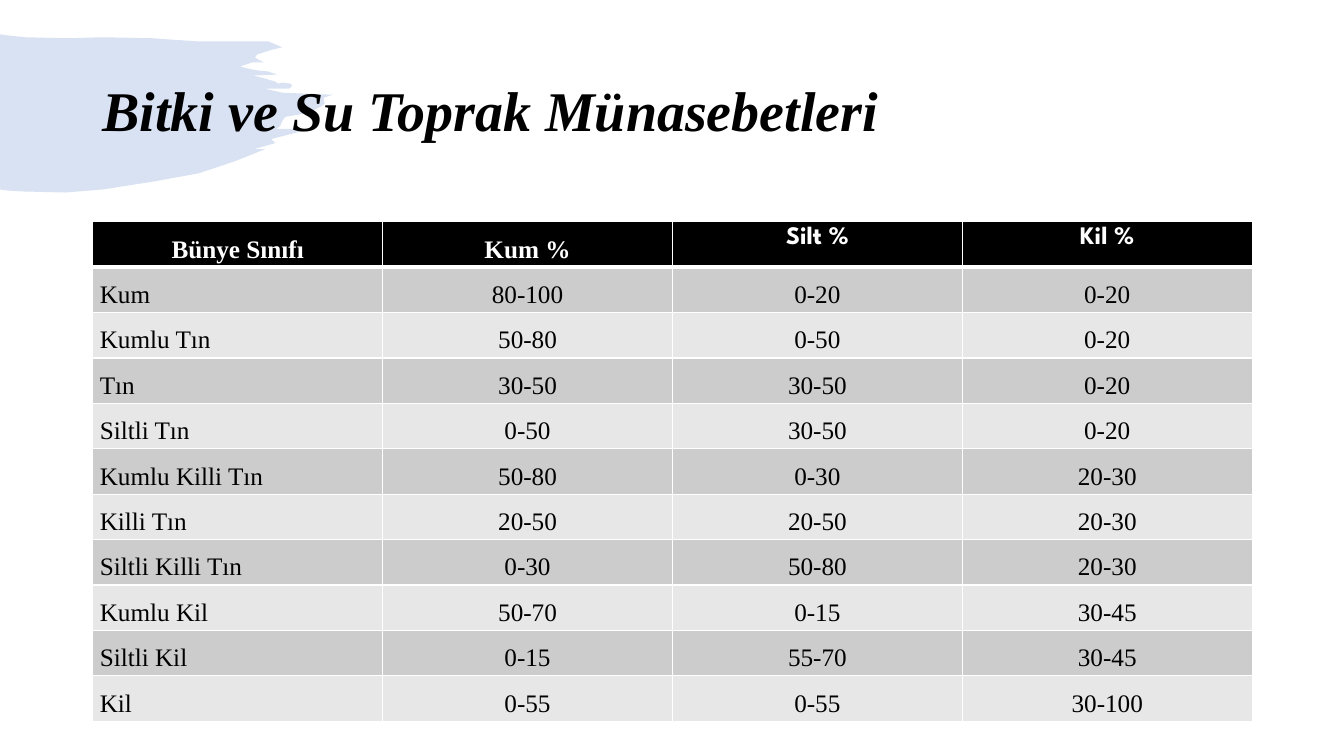
from typing import NamedTuple

from lxml.etree import SubElement as Sub
from pptx import Presentation
from pptx.dml.color import RGBColor
from pptx.enum.text import MSO_ANCHOR as Anchor, PP_ALIGN as Align
from pptx.oxml.ns import qn
from pptx.util import Inches, Pt

SERIF = "Times New Roman"
SANS = "League Spartan"
HEADS = ("Bünye Sınıfı", "Kum %", "Silt %", "Kil %")
BRUSH = [
    (0, 0.34), (0.06, 0.35), (0.25, 0.37), (0.66, 0.38), (1.02, 0.37),
    (1.51, 0.38), (1.94, 0.41), (2.48, 0.41), (2.66, 0.41), (2.8, 0.47),
    (2.71, 0.49), (2.55, 0.54), (2.53, 0.57), (2.56, 0.59), (2.62, 0.62),
    (2.5, 0.62), (2.38, 0.66), (2.46, 0.68), (2.56, 0.7), (2.66, 0.71),
    (2.75, 0.74), (2.51, 0.75), (2.63, 0.78), (2.73, 0.81), (2.76, 0.83),
    (2.8, 0.82), (2.88, 0.83), (2.9, 0.85), (2.87, 0.88), (2.84, 0.88),
    (2.63, 0.88), (2.8, 0.92), (3.3, 0.94), (3.21, 0.97), (3.22, 1.03),
    (3.18, 1.06), (3.07, 1.11), (3, 1.13), (2.83, 1.16), (2.8, 1.2),
    (2.78, 1.25), (2.74, 1.28), (3.08, 1.28), (2.69, 1.38), (2.73, 1.42),
    (2.52, 1.48), (2.63, 1.48), (2.33, 1.6), (1.97, 1.72), (1.53, 1.8),
    (1.02, 1.88), (0.65, 1.91), (0.23, 1.9), (0.07, 1.89), (0, 1.88),
]


class Soil(NamedTuple):
    name: str
    sand: str
    silt: str
    clay: str


SOILS = [
    Soil("Kum", "80-100", "0-20", "0-20"),
    Soil("Kumlu Tın", "50-80", "0-50", "0-20"),
    Soil("Tın", "30-50", "30-50", "0-20"),
    Soil("Siltli Tın", "0-50", "30-50", "0-20"),
    Soil("Kumlu Killi Tın", "50-80", "0-30", "20-30"),
    Soil("Killi Tın", "20-50", "20-50", "20-30"),
    Soil("Siltli Killi Tın", "0-30", "50-80", "20-30"),
    Soil("Kumlu Kil", "50-70", "0-15", "30-45"),
    Soil("Siltli Kil", "0-15", "55-70", "30-45"),
    Soil("Kil", "0-55", "0-55", "30-100"),
]


def color(code: str) -> RGBColor:
    return RGBColor.from_string(code)


def write(frame, text: str, *, size=18, font=SERIF, ink="000000", bold=False,
          slant=False, align=Align.LEFT, line=1.0, after=0) -> None:
    para = frame.paragraphs[0]
    para.alignment = align
    para.line_spacing = line
    para.space_after = Pt(after)
    run = para.add_run()
    run.text = text
    run.font.size = Pt(size)
    run.font.name = font
    run.font.bold = bold
    run.font.italic = slant
    run.font.color.rgb = color(ink)


def paint(slide) -> None:
    start, *rest = [(Inches(x), Inches(y)) for x, y in BRUSH]
    form = slide.shapes.build_freeform(*start)
    form.add_line_segments(rest, close=True)
    brush = form.convert_to_shape()
    brush.shadow.inherit = False
    brush.fill.solid()
    brush.fill.fore_color.rgb = color("4472C4")
    tint = brush.fill._xPr.find(".//" + qn("a:srgbClr"))
    Sub(tint, qn("a:alpha"), val="20000")
    brush.line.fill.background()


def title(slide, text: str) -> None:
    box = slide.shapes.add_textbox(Inches(0.92), Inches(0.4), Inches(11.5), Inches(1.45))
    frame = box.text_frame
    frame.word_wrap = True
    frame.vertical_anchor = Anchor.MIDDLE
    write(frame, text, size=40, bold=True, slant=True, line=0.9)


def edge(cell, base: int) -> None:
    props = cell._tc.get_or_add_tcPr()
    for spot, (side, width) in enumerate(zip("LRTB", (1, 1, 1, base))):
        line = props.makeelement(qn(f"a:ln{side}"), {"w": str(Pt(width))})
        solid = Sub(line, qn("a:solidFill"))
        Sub(solid, qn("a:srgbClr"), val="FFFFFF")
        props.insert(spot, line)


def grid(slide) -> None:
    rows = [HEADS, *SOILS]
    shape = slide.shapes.add_table(len(rows), len(HEADS), Inches(0.92), Inches(2.2),
                                   Inches(11.5), Inches(4.9))
    table = shape.table
    for r, row in enumerate(rows):
        head = r == 0
        fill = "000000" if head else "CCCCCC" if r % 2 else "E7E7E7"
        for c, text in enumerate(row):
            cell = table.cell(r, c)
            cell.fill.solid()
            cell.fill.fore_color.rgb = color(fill)
            edge(cell, 3 if head else 1)
            plain = head and c > 1
            if not plain:
                cell.margin_left = cell.margin_right = Inches(0.07)
                cell.margin_top = cell.margin_bottom = 0
            write(cell.text_frame, text, font=SANS if plain else SERIF,
                  ink="FFFFFF" if head else "000000", bold=head,
                  align=Align.CENTER if head or c else Align.JUSTIFY,
                  line=1.0 if plain else 1.5, after=0 if plain else 12)


def main() -> None:
    deck = Presentation()
    deck.slide_width = Inches(13.33)
    deck.slide_height = Inches(7.5)
    slide = deck.slides.add_slide(deck.slide_layouts[6])
    paint(slide)
    title(slide, "Bitki ve Su Toprak Münasebetleri")
    grid(slide)
    deck.save("out.pptx")


if __name__ == "__main__":
    main()
